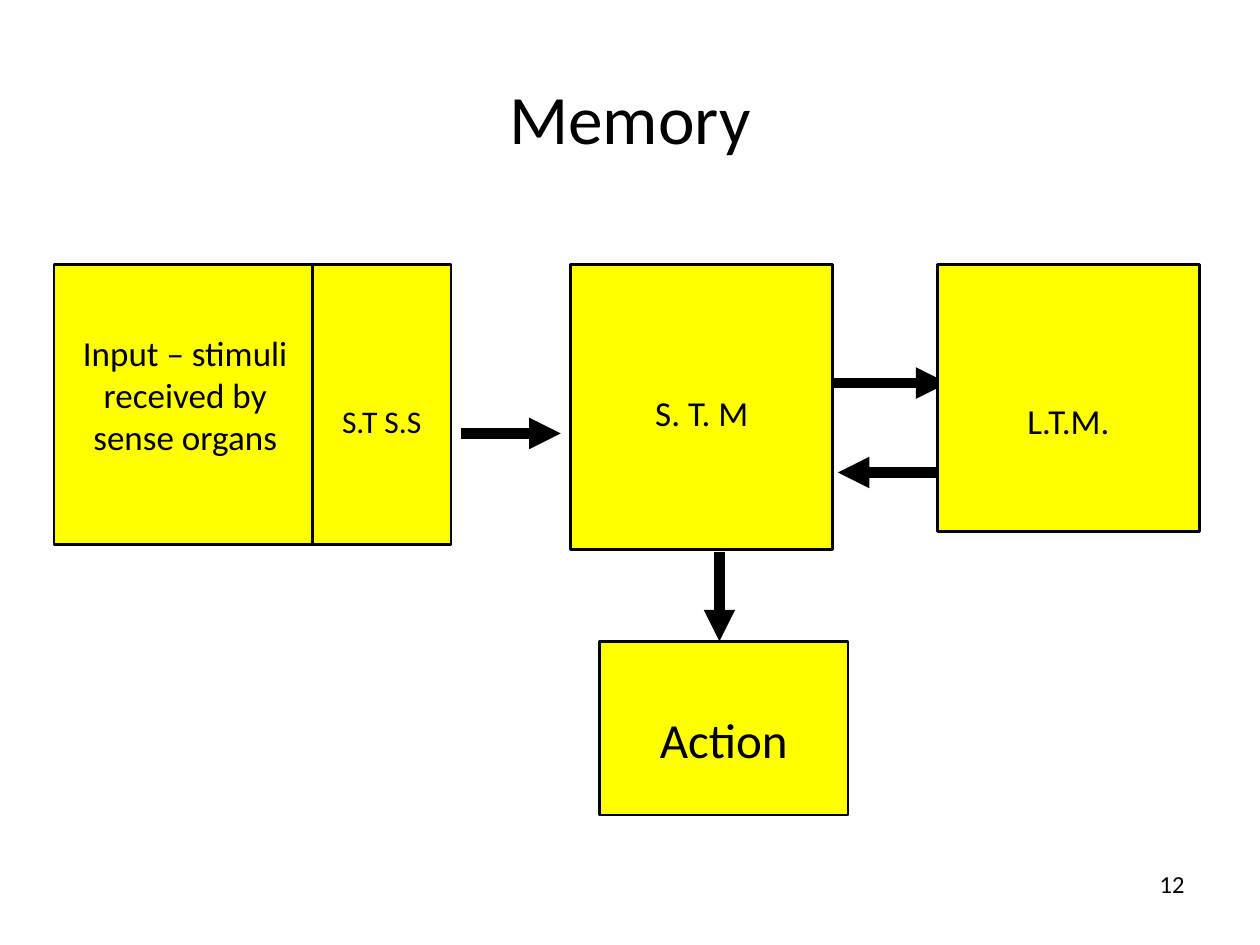
from lxml.etree import SubElement
from pptx import Presentation
from pptx.dml.color import RGBColor
from pptx.enum.shapes import MSO_CONNECTOR, MSO_SHAPE
from pptx.enum.text import MSO_ANCHOR, PP_ALIGN
from pptx.oxml.ns import qn
from pptx.util import Inches, Pt

FONT, BLACK, YELLOW = "Calibri", "000000", "FFFF00"
ROW, WIDE, PAD = 2.1, 2.08, 0.05  # top of the stores, store width, text inset

# text, size, left, top, width, height, drop of the text below the middle
BOXES = [
    ("Input – stimuli received by sense organs", 20, 0.43, ROW, WIDE, 2.22, -0.08),
    ("S. T. M", 20, 4.53, ROW, WIDE, 2.26, 0.04),
    ("L.T.M.", 20, 7.44, ROW, WIDE, 2.12, 0.18),
    ("S.T S.S", 18, 2.48, ROW, 1.1, 2.22, 0.13),
    ("Action", 28, 4.76, 5.09, 1.97, 1.38, 0.08),
]
# start x, start y, end x, end y
STORE = (6.57, 3.04, 7.52, 3.04)  # its ends lie behind the boxes
ARROWS = [
    (3.66, 3.44, 4.45, 3.44),
    (7.44, 3.75, 6.65, 3.75),
    (5.71, 4.38, 5.71, 5.09),
]


def color(code):
    return RGBColor.from_string(code)


def write(shape, text, size, align):
    frame = shape.text_frame
    frame.word_wrap = True
    frame.vertical_anchor = MSO_ANCHOR.MIDDLE
    para = frame.paragraphs[0]
    para.alignment = align
    run = para.add_run()
    run.text = text
    for name, value in {"name": FONT, "size": Pt(size)}.items():
        setattr(run.font, name, value)
    run.font.color.rgb = color(BLACK)
    return frame


def box(shapes, text, size, left, top, width, height, drop):
    shape = shapes.add_shape(
        MSO_SHAPE.RECTANGLE, *map(Inches, (left, top, width, height)))
    shape.shadow.inherit = False
    shape.fill.solid()
    shape.fill.fore_color.rgb = color(YELLOW)
    shape.line.color.rgb = color(BLACK)
    shape.line.width = Pt(1.5)
    frame = write(shape, text, size, PP_ALIGN.CENTER)
    frame.margin_top = Inches(PAD + max(0, 2 * drop))
    frame.margin_bottom = Inches(PAD + max(0, -2 * drop))


def arrow(shapes, *ends):
    link = shapes.add_connector(MSO_CONNECTOR.STRAIGHT, *map(Inches, ends))
    link.line.color.rgb = color(BLACK)
    link.line.width = Pt(6)
    SubElement(link.line._get_or_add_ln(), qn("a:tailEnd"), type="triangle")
    SubElement(link._element.spPr, qn("a:effectLst"))


def main():
    deck = Presentation()
    deck.slide_width, deck.slide_height = Inches(10), Inches(7.5)
    slide = deck.slides.add_slide(deck.slide_layouts[5])
    shapes = slide.shapes

    title = shapes.title
    place = {"left": 0.5, "top": 0.59, "width": 9, "height": 0.67}
    for name, value in place.items():
        setattr(title, name, Inches(value))
    write(title, "Memory", 39.6, PP_ALIGN.CENTER)

    number = shapes.add_textbox(*map(Inches, (7.17, 6.75, 2.33, 0.52)))
    write(number, "12", 14, PP_ALIGN.RIGHT)

    arrow(shapes, *STORE)
    for item in BOXES:
        box(shapes, *item)
    for ends in ARROWS:
        arrow(shapes, *ends)
    deck.save("out.pptx")


if __name__ == "__main__":
    main()
